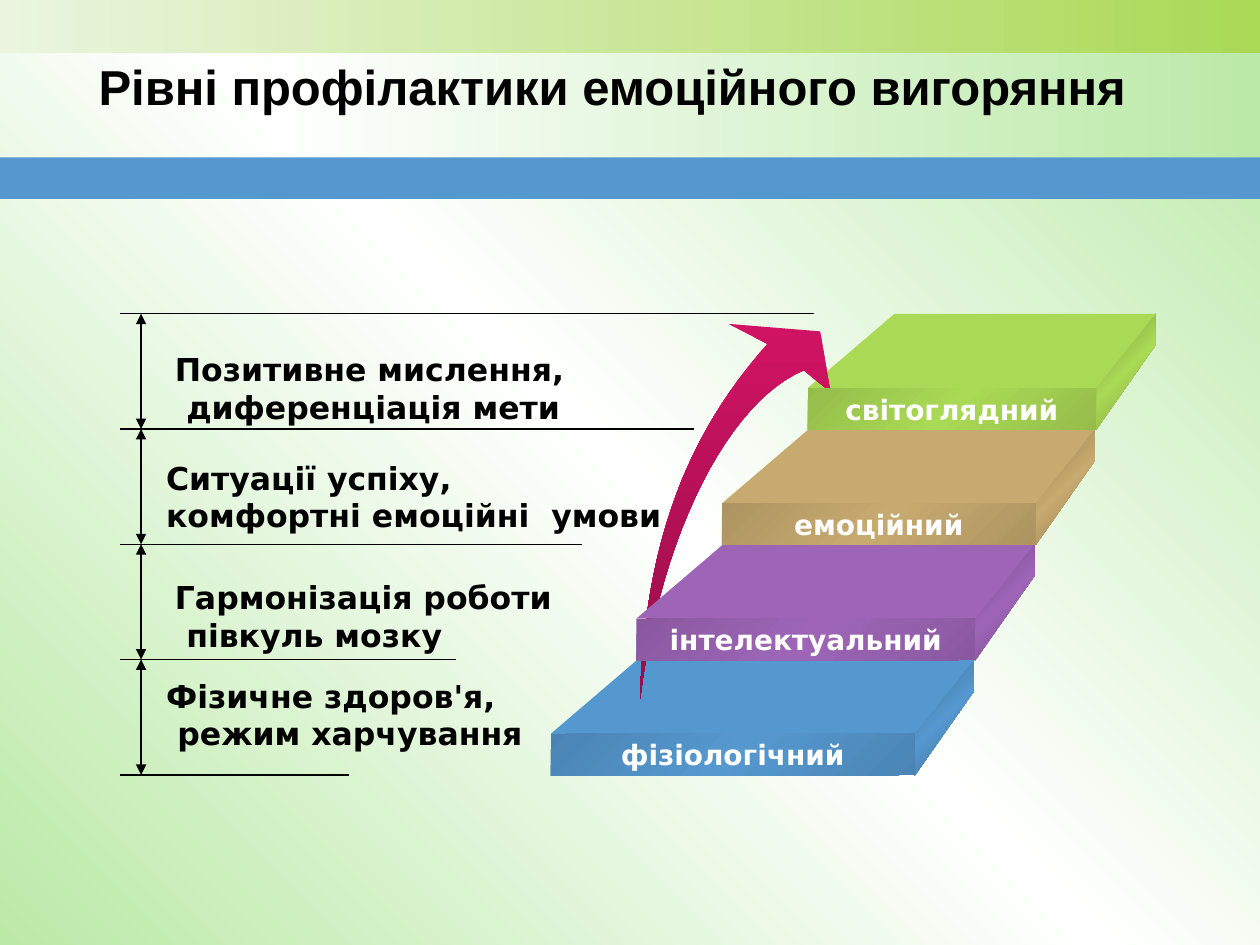
from dataclasses import dataclass

from lxml.etree import SubElement
from pptx import Presentation
from pptx.dml.color import RGBColor
from pptx.enum.shapes import MSO_CONNECTOR, MSO_SHAPE
from pptx.enum.text import MSO_ANCHOR, PP_ALIGN
from pptx.oxml.ns import qn
from pptx.util import Inches, Pt


@dataclass(frozen=True)
class Theme:
    title_font: str = "Arial"
    body_font: str = "DejaVu Sans"
    title_size: int = 28
    caption_size: int = 18
    label_size: int = 16
    ink: str = "000000"
    white: str = "FFFFFF"
    mint: str = "BBEAA8"
    pale: str = "EBF5DF"
    lime: str = "AAD955"
    blue: str = "5598CF"
    arrow: tuple = ("D11364", "960E48")


@dataclass(frozen=True)
class Box:
    left: float
    top: float
    width: float
    height: float

    def inches(self):
        return [Inches(v) for v in (self.left, self.top, self.width, self.height)]


@dataclass(frozen=True)
class Level:
    label: str
    color: str
    front_shade: str
    side_shade: str
    caption: tuple
    caption_box: Box  # relative to the captions region
    hanging: bool = True


THEME = Theme()
# From the top step down
LEVELS = [
    Level("світоглядний", "AAD955", "94BD4A", "7A9B3D",
          ("Позитивне мислення,", "диференціація мети"), Box(0.34, 0.24, 3.36, 0.71)),
    Level("емоційний", "C7AA6F", "AD9461", "8E7A4F",
          ("Ситуації успіху,", "комфортні емоційні  умови"),
          Box(0.27, 1.1, 4.34, 0.71), hanging=False),
    Level("інтелектуальний", "9E65B7", "89589F", "714883",
          ("Гармонізація роботи", "півкуль мозку"), Box(0.34, 2.05, 3.22, 0.71)),
    Level("фізіологічний", "5598CF", "4A84B4", "3D6D94",
          ("Фізичне здоров'я,", "режим харчування"), Box(0.27, 2.83, 3.07, 0.71)),
]


def paint_gradient(fill, properties, colors, angle):
    """Spread the colours evenly; the angle runs clockwise."""
    fill.gradient()
    gradient = properties.find(qn("a:gradFill"))
    stops = gradient.find(qn("a:gsLst"))
    for stop in list(stops):
        stops.remove(stop)
    for index, color in enumerate(colors):
        position = round(100000 * index / (len(colors) - 1))
        stop = SubElement(stops, qn("a:gs"), pos=str(position))
        SubElement(stop, qn("a:srgbClr"), val=color)
    line = gradient.find(qn("a:lin"))
    line.set("ang", str(angle * 60000))
    line.set("scaled", "0")


def paint(shape, colors, angle=0):
    shape.shadow.inherit = False
    shape.line.fill.background()
    if isinstance(colors, str):
        shape.fill.solid()
        shape.fill.fore_color.rgb = RGBColor.from_string(colors)
    else:
        paint_gradient(shape.fill, shape._element.spPr, colors, angle)


def add_rectangle(page, box, colors, angle=0):
    shape = page.shapes.add_shape(MSO_SHAPE.RECTANGLE, *box.inches())
    paint(shape, colors, angle)
    return shape


def add_polygon(page, box, points, colors, angle=0):
    corners = [(Inches(box.left + x), Inches(box.top + y)) for x, y in points]
    builder = page.shapes.build_freeform(*corners[0])
    builder.add_line_segments(corners[1:], close=True)
    paint(builder.convert_to_shape(), colors, angle)


def add_line(page, start, end, arrows=False):
    ends = [Inches(v) for v in (*start, *end)]
    line = page.shapes.add_connector(MSO_CONNECTOR.STRAIGHT, *ends)
    line.line.color.rgb = RGBColor.from_string(THEME.ink)
    line.line.width = Pt(0.75)
    properties = line._element.spPr
    if arrows:
        for tag in ("a:headEnd", "a:tailEnd"):
            SubElement(properties.find(qn("a:ln")), qn(tag), type="triangle")
    SubElement(properties, qn("a:effectLst"))


def write(para, text, font, size, color, align=PP_ALIGN.LEFT):
    para.alignment = align
    span = para.add_run()
    span.text = text
    for name, value in {"name": font, "size": Pt(size), "bold": True}.items():
        setattr(span.font, name, value)
    span.font.color.rgb = RGBColor.from_string(color)


def add_header(page, box):
    add_rectangle(page, Box(box.left, box.top, box.width, 0.42), (THEME.pale, THEME.lime))
    add_rectangle(page, Box(box.left + 2.17, box.top + 0.42, box.width - 2.17, 0.83),
                  (THEME.white, THEME.mint))
    add_rectangle(page, Box(box.left, box.top + 1.25, box.width, 0.33), THEME.blue)

    title = page.shapes.title
    page.shapes._spTree.append(title._element)  # bring in front of the bands
    title_box = Box(box.left, box.top + 0.29, 9.72, 0.79)
    for name, value in zip(("left", "top", "width", "height"), title_box.inches()):
        setattr(title, name, value)
    title.text_frame.vertical_anchor = MSO_ANCHOR.MIDDLE
    write(title.text_frame.paragraphs[0], "Рівні профілактики емоційного вигоряння",
          THEME.title_font, THEME.title_size, THEME.ink, PP_ALIGN.CENTER)


def add_scale(page, box):
    """Ruled lines of growing length, joined by double arrows."""
    step = box.height / len(LEVELS)
    for index, length in enumerate((5.51, 4.56, 3.67, 2.67, 1.82)):
        y = box.top + index * step
        add_line(page, (box.left + length, y), (box.left, y))
        if index < len(LEVELS):
            x = box.left + 0.17
            add_line(page, (x, y), (x, y + step), arrows=True)


def add_captions(page, box):
    for level in LEVELS:
        place = level.caption_box
        area = Box(box.left + place.left, box.top + place.top, place.width, place.height)
        frame = page.shapes.add_textbox(*area.inches()).text_frame
        frame.word_wrap = True
        for index, text in enumerate(level.caption):
            para = frame.add_paragraph() if index else frame.paragraphs[0]
            if index and level.hanging:
                para._p.get_or_add_pPr().set("marL", str(Inches(0.09)))
            write(para, text, THEME.body_font, THEME.caption_size, THEME.ink)


def curve(start, control_a, control_b, end, count=24):
    """Points along a cubic Bezier curve."""
    points = []
    for index in range(count + 1):
        t = index / count
        weights = ((1 - t) ** 3, 3 * t * (1 - t) ** 2, 3 * t * t * (1 - t), t ** 3)
        points.append(tuple(sum(w * v for w, v in zip(weights, axis))
                            for axis in zip(start, control_a, control_b, end)))
    return points


def add_rising_arrow(page, box):
    tail = (0.71, 3.06)
    outer = curve(tail, (0.75, 1.59), (1.23, 0.8), (1.72, 0.24))
    head = [(1.41, 0.08), (2.14, 0.14), (2.22, 0.62)]
    inner = curve((2.01, 0.45), (1.43, 0.69), (0.88, 1.71), tail)
    add_polygon(page, box, outer + head + inner[:-1], THEME.arrow, 90)


def add_staircase(page, box):
    front_height, rise = 0.33, 0.59
    step = box.height / len(LEVELS)

    def front_of(index):
        up = len(LEVELS) - 1 - index
        return Box(0.68 * up, rise + index * step, 2.89 - 0.2 * up, front_height)

    def add_body(index):
        level, front = LEVELS[index], front_of(index)
        left, right, y = front.left, front.left + front.width, front.top
        back, back_y = right + 0.47, y - rise
        add_polygon(page, box, [(back, back_y + 0.25), (right, y + front_height),
                                (right, y), (back, back_y)],
                    (level.side_shade, level.color, level.side_shade), 45)
        add_polygon(page, box, [(right, y), (left, y), (left + 0.69, back_y),
                                (back, back_y)], level.color)

    for index in (0, 1, 3):
        add_body(index)
    add_rising_arrow(page, box)
    add_body(2)  # this step hides part of the arrow

    for index, level in enumerate(LEVELS):
        front = front_of(index)
        area = Box(box.left + front.left, box.top + front.top, front.width, front.height)
        shape = add_rectangle(page, area,
                              (level.front_shade, level.color, level.front_shade), 45)
        shape.text_frame.word_wrap = False
        shape.text_frame.vertical_anchor = MSO_ANCHOR.MIDDLE
        write(shape.text_frame.paragraphs[0], level.label, THEME.body_font,
              THEME.label_size, THEME.white, PP_ALIGN.CENTER)


def main():
    deck = Presentation()
    deck.slide_width, deck.slide_height = Inches(10), Inches(7.5)
    page = deck.slides.add_slide(deck.slide_layouts[5])
    fill = page.background.fill
    paint_gradient(fill, page._element.cSld.bg.bgPr,
                   (THEME.mint, THEME.white, THEME.mint), 315)
    add_header(page, Box(0, 0, 10, 1.58))
    notes_box = Box(0.95, 2.49, 5.51, 3.66)
    add_scale(page, notes_box)
    add_captions(page, notes_box)
    add_staircase(page, Box(4.37, 2.49, 4.8, 3.66))
    deck.save("out.pptx")


if __name__ == "__main__":
    main()
